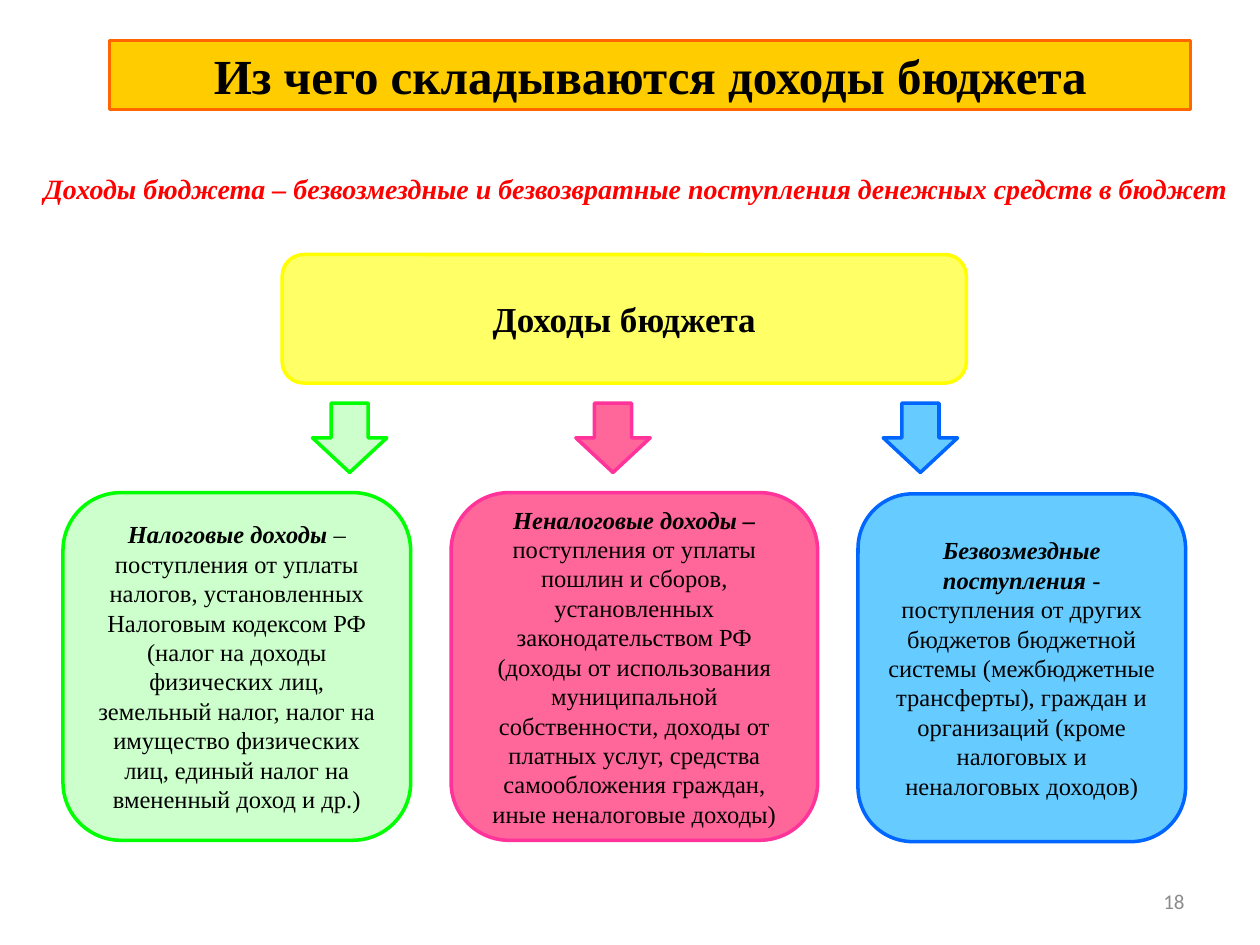
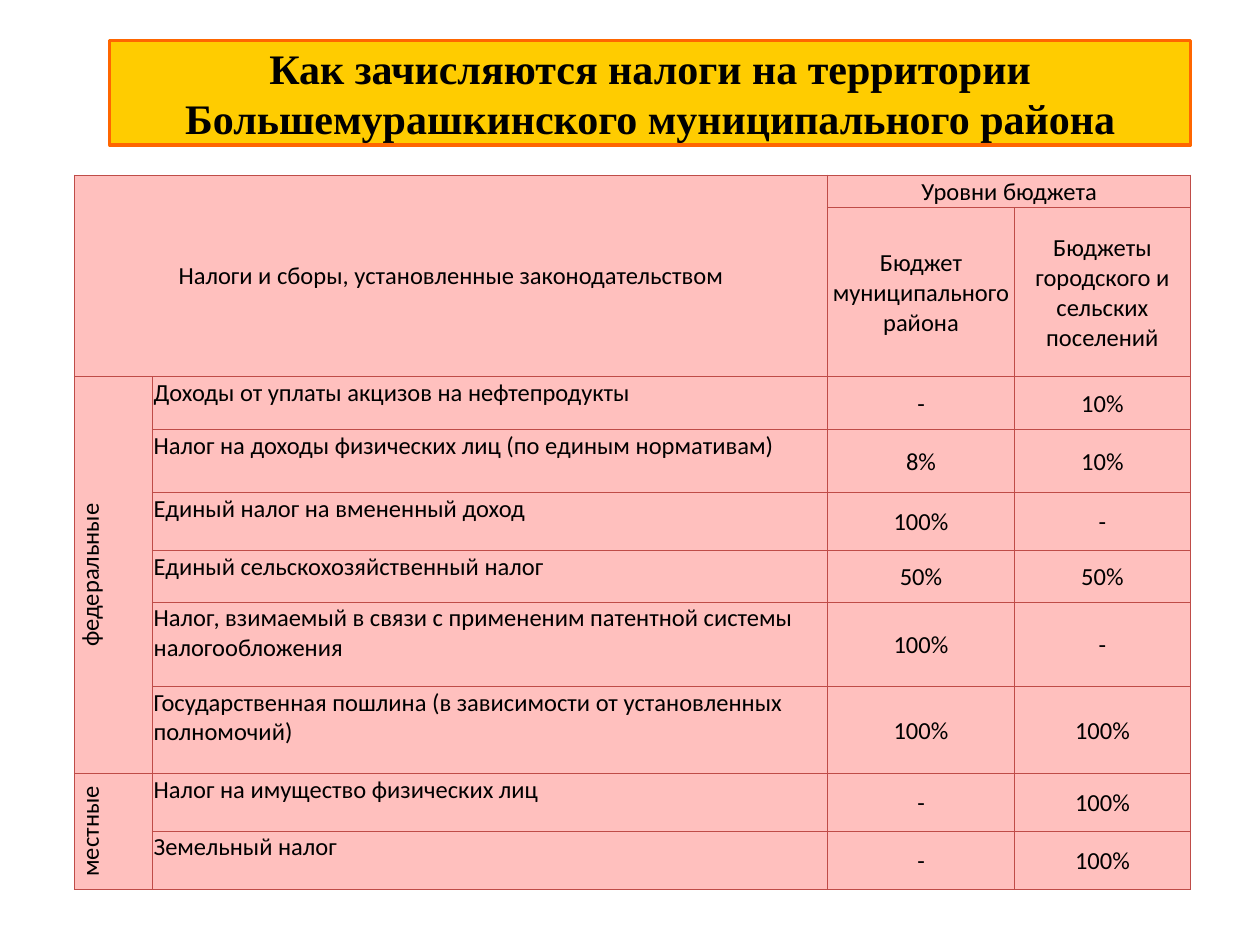
from lxml.etree import SubElement
from pptx import Presentation
from pptx.dml.color import RGBColor
from pptx.enum.shapes import MSO_SHAPE
from pptx.enum.text import MSO_ANCHOR, MSO_AUTO_SIZE, PP_ALIGN
from pptx.oxml import parse_xml
from pptx.oxml.ns import nsdecls, qn
from pptx.util import Inches, Pt

HEX = {
    "black": "000000", "red": "FF0000", "grey": "8C8C8C",
    "gold": "FFCC00", "orange": "FF6600",
    "lemon": "FFFF66", "yellow": "FFFF00",
    "mint": "CCFFCC", "green": "00FF00",
    "rose": "FF6699", "pink": "FF3399",
    "sky": "66CCFF", "blue": "0066FF",
    "cell": "FFC0BE", "rule": "BF4C48",
}
SERIF, SANS = "Times New Roman", "Calibri"

# Kind of income: fill, line, arrow left, card box, term, meaning
CARDS = [
    ("mint", "green", 2.48, (0.5, 3.91, 2.76, 2.76), "Налоговые доходы",
     " – поступления от уплаты налогов, установленных Налоговым кодексом РФ "
     "(налог на доходы физических лиц, земельный налог, налог на имущество "
     "физических лиц, единый налог на вмененный доход и др.)"),
    ("rose", "pink", 4.57, (3.58, 3.91, 2.91, 2.76), "Неналоговые доходы –",
     " поступления от уплаты пошлин и сборов, установленных "
     "законодательством РФ (доходы от использования муниципальной "
     "собственности, доходы от платных услуг, средства самообложения "
     "граждан, иные неналоговые доходы)"),
    ("sky", "blue", 7.01, (6.81, 3.92, 2.6, 2.76), "Безвозмездные поступления ",
     "- поступления от других бюджетов бюджетной системы (межбюджетные "
     "трансферты), граждан и организаций (кроме налоговых и неналоговых "
     "доходов)"),
]

# Tax, share of the district, share of the settlements
TAXES = [
    ("Доходы от уплаты акцизов на нефтепродукты", "-", "10%"),
    ("Налог на доходы физических лиц (по единым нормативам)", "8%", "10%"),
    ("Единый налог на вмененный доход", "100%", "-"),
    ("Единый сельскохозяйственный налог", "50%", "50%"),
    ("Налог, взимаемый в связи с примененим патентной системы "
     "налогообложения", "100%", "-"),
    ("Государственная пошлина (в зависимости от установленных полномочий)",
     "100%", "100%"),
    ("Налог на имущество физических лиц", "-", "100%"),
    ("Земельный налог", "-", "100%"),
]
# Label and the first and last table row it covers
GROUPS = [("федеральные", 2, 7), ("местные", 8, 9)]
COLS = [0.62, 5.36, 1.48, 1.4]
ROWS = [0.26, 1.34, 0.42, 0.5, 0.46, 0.41, 0.67, 0.69, 0.46, 0.46]


def rgb(name):
    return RGBColor.from_string(HEX[name])


def style(run, size, face=SERIF, color="black", bold=False, slant=False):
    font = run.font
    font.size, font.name = Pt(size), face
    font.bold, font.italic = bold, slant
    font.color.rgb = rgb(color)


def paint(shape, fill, line):
    shape.fill.solid()
    shape.fill.fore_color.rgb = rgb(fill)
    shape.line.color.rgb = rgb(line)
    shape.line.width = Pt(2)


def write(frame, text, size, align=PP_ALIGN.CENTER, **look):
    frame.word_wrap = True
    para = frame.paragraphs[0]
    para.text = text
    para.alignment = align
    style(para.runs[0], size, **look)
    return para


def add_form(slide, kind, box, fill, line):
    shape = slide.shapes.add_shape(kind, *map(Inches, box))
    shape.shadow.inherit = False
    paint(shape, fill, line)
    shape.text_frame.vertical_anchor = MSO_ANCHOR.MIDDLE
    return shape


def add_text(slide, box, text, size, anchor=MSO_ANCHOR.TOP, **look):
    frame = slide.shapes.add_textbox(*map(Inches, box)).text_frame
    frame.vertical_anchor = anchor
    write(frame, text, size, **look)


def add_page(deck, title, size, height):
    """Add a slide whose title sits in a rounded gold band."""
    slide = deck.slides.add_slide(deck.slide_layouts[5])
    band = slide.shapes.title
    band.left, band.top = Inches(0.87), Inches(0.32)
    band.width, band.height = Inches(8.58), Inches(height)
    geom = parse_xml(f'<a:prstGeom {nsdecls("a")} prst="roundRect"><a:avLst/></a:prstGeom>')
    band.element.spPr.insert(1, geom)
    paint(band, "gold", "orange")
    frame = band.text_frame
    frame.auto_size = MSO_AUTO_SIZE.NONE
    frame.vertical_anchor = MSO_ANCHOR.MIDDLE
    write(frame, title, size, bold=True)
    return slide


def add_card(slide, fill, line, left, box, term, text):
    add_form(slide, MSO_SHAPE.DOWN_ARROW, (left, 3.2, 0.59, 0.55), fill, line)
    card = add_form(slide, MSO_SHAPE.ROUNDED_RECTANGLE, box, fill, line)
    para = write(card.text_frame, term, 14, bold=True, slant=True)
    run = para.add_run()
    run.text = text
    style(run, 14)


def edge(cell):
    """Rule all four sides of a cell, then fill it."""
    props = cell._tc.get_or_add_tcPr()
    for side in ("lnL", "lnR", "lnT", "lnB"):
        line = SubElement(props, qn(f"a:{side}"), w=str(Pt(0.75)))
        fill = SubElement(line, qn("a:solidFill"))
        SubElement(fill, qn("a:srgbClr"), val=HEX["rule"])
    cell.fill.solid()
    cell.fill.fore_color.rgb = rgb("cell")
    cell.margin_left = cell.margin_right = cell.margin_top = Inches(0.01)
    cell.margin_bottom = 0


def put(cell, text, align=PP_ALIGN.CENTER, anchor=MSO_ANCHOR.MIDDLE):
    para = cell.text_frame.paragraphs[0]
    para.text = text
    para.alignment = align
    style(para.runs[0], 14, face=SANS)
    cell.vertical_anchor = anchor


def add_grid(slide):
    box = (0.59, 1.39, sum(COLS), sum(ROWS))
    grid = slide.shapes.add_table(len(ROWS), len(COLS), *map(Inches, box)).table
    grid.first_row = grid.horz_banding = False
    for col, width in zip(grid.columns, COLS):
        col.width = Inches(width)
    for row, height in zip(grid.rows, ROWS):
        row.height = Inches(height)
    for cell in grid.iter_cells():
        edge(cell)

    # Header
    grid.cell(0, 0).merge(grid.cell(1, 1))
    grid.cell(0, 2).merge(grid.cell(0, 3))
    put(grid.cell(0, 0), "Налоги и сборы, установленные законодательством")
    put(grid.cell(0, 2), "Уровни бюджета")
    put(grid.cell(1, 2), "Бюджет муниципального района")
    put(grid.cell(1, 3), "Бюджеты городского и сельских поселений")

    # Upright group labels
    for label, first, last in GROUPS:
        cell = grid.cell(first, 0)
        cell.merge(grid.cell(last, 0))
        put(cell, label)
        cell._tc.get_or_add_tcPr().set("vert", "vert270")

    # Taxes and shares
    for row, (tax, *shares) in enumerate(TAXES, 2):
        put(grid.cell(row, 1), tax, PP_ALIGN.LEFT, MSO_ANCHOR.TOP)
        for col, share in enumerate(shares, 2):
            put(grid.cell(row, col), share)


def main():
    deck = Presentation()
    deck.slide_width, deck.slide_height = Inches(10), Inches(7.5)

    # Sources of income
    slide = add_page(deck, "Из чего складываются доходы бюджета", 28, 0.55)
    add_text(slide, (0.2, 1.31, 9.69, 0.37),
             "Доходы бюджета – безвозмездные и безвозвратные поступления "
             "денежных средств в бюджет", 16, color="red", bold=True, slant=True)
    root = add_form(slide, MSO_SHAPE.ROUNDED_RECTANGLE,
                    (2.24, 2.02, 5.43, 1.02), "lemon", "yellow")
    write(root.text_frame, "Доходы бюджета", 20, bold=True)
    for card in CARDS:
        add_card(slide, *card)
    add_text(slide, (7.17, 6.95, 2.33, 0.4), "18", 12, MSO_ANCHOR.MIDDLE,
             align=PP_ALIGN.RIGHT, face=SANS, color="grey")

    # Split of taxes
    slide = add_page(deck, "Как зачисляются налоги на территории "
                     "Большемурашкинского муниципального района", 24, 0.83)
    add_grid(slide)

    deck.save("out.pptx")


if __name__ == "__main__":
    main()
